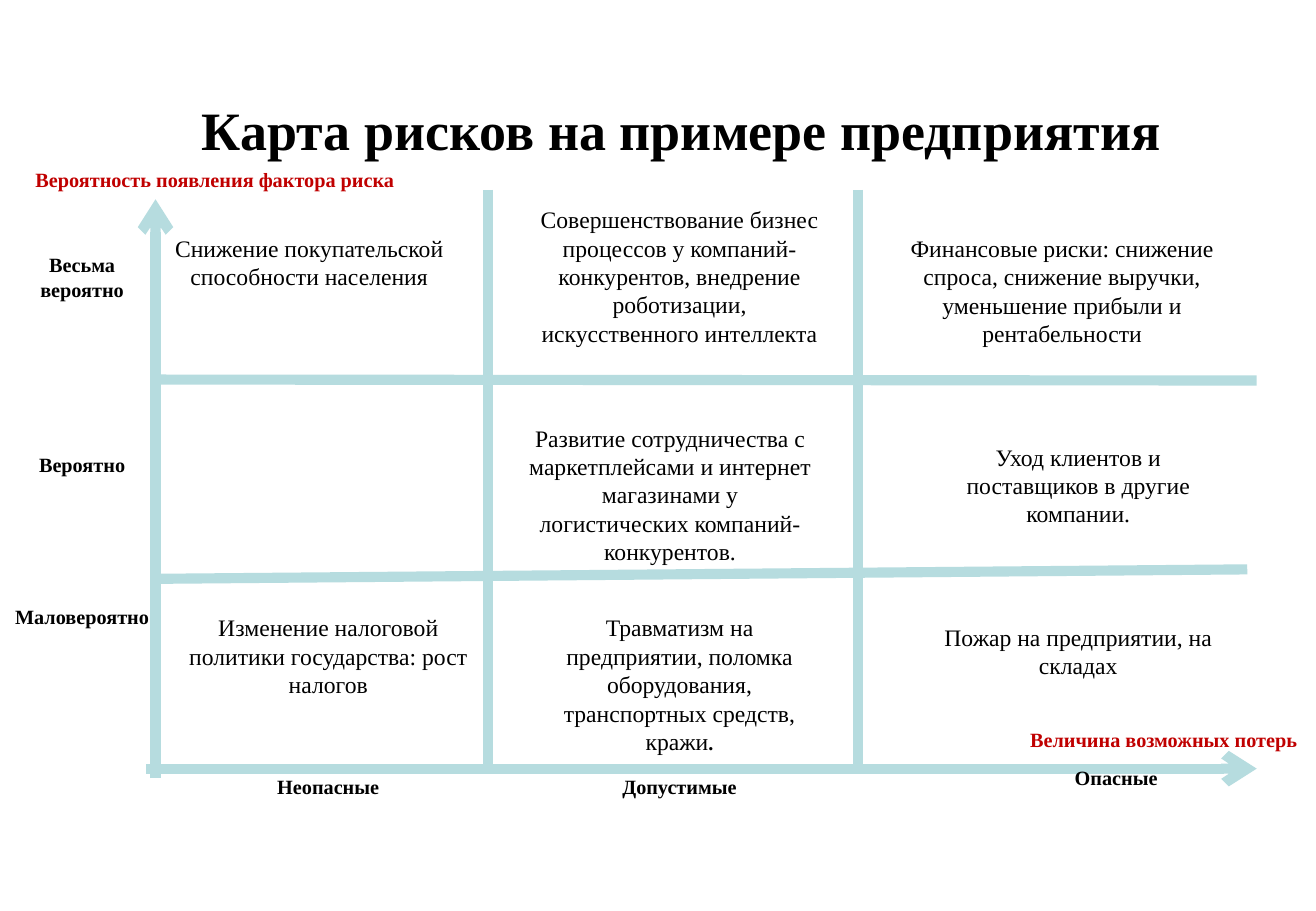
import pptx
import pptx.util
import pptx.dml.color
import pptx.enum.shapes
import pptx.enum.text
import pptx.oxml.ns
import lxml.etree

WIDE, HIGH = 10.83, 7.5
UNIT = HIGH / 96          # the slide is 96 grid rows high
AXIS = 1.28               # columns are counted from the upright axis
EDGE = -AXIS / UNIT       # left edge of the slide, in columns
TALL = 8.2                # rows in a text box
CELL = 32.4               # columns in a text box
SIDE = 17.3               # columns in a row label
FONT = "Times New Roman"
COLORS = {"text": "000000", "axis": "C00000", "grid": "B6DCDF"}

# (column, row, width, text)
RISKS = [
    (0, 24, CELL, "Снижение покупательской способности населения"),
    (39, 21, CELL, "Совершенствование бизнес процессов у компаний-конкурентов, "
                   "внедрение роботизации, искусственного интеллекта"),
    (78, 24, 35, "Финансовые риски: снижение спроса, снижение выручки, "
                 "уменьшение прибыли и рентабельности"),
    (38, 44, CELL, "Развитие сотрудничества с маркетплейсами и интернет "
                   "магазинами у логистических компаний-конкурентов."),
    (81, 46, CELL, "Уход клиентов и поставщиков в другие компании."),
    (2, 64, CELL, "Изменение налоговой политики государства: рост налогов"),
    (81, 65, CELL, "Пожар на предприятии, на складах"),
]
INJURY = ("Травматизм на предприятии, поломка оборудования, "
          "транспортных средств, кражи")
LABELS = [
    (EDGE, 26, SIDE, "Весьма вероятно"),
    (EDGE, 47, SIDE, "Вероятно"),
    (EDGE, 63, SIDE, "Маловероятно"),
    (2, 81, CELL, "Неопасные"),
    (39, 81, CELL, "Допустимые"),
    (85, 80, CELL, "Опасные"),
]
NAMES = [
    (EDGE, 17, 45.3, "Вероятность появления фактора риска"),
    (90, 76, CELL, "Величина возможных потерь"),
]
# (start column, start row, end column, end row, arrow)
LINES = [
    (-1, 81, 116, 81, True),
    (0, 82, 0, 21, True),
    (0, 61, 115, 60, False),
    (0, 40, 116, 40.1, False),
    (35, 20, 35, 81, False),
    (74, 20, 74, 81, False),
]


def at_col(col):
    return pptx.util.Inches(AXIS + col * UNIT)


def span(count):
    return pptx.util.Inches(count * UNIT)


def paint(name):
    return pptx.dml.color.RGBColor.from_string(COLORS[name])


def add_runs(frame, runs):
    """Write centred runs, each given as (text, size, bold, colour)."""
    frame.word_wrap = True
    para = frame.paragraphs[0]
    para.alignment = pptx.enum.text.PP_ALIGN.CENTER
    for text, size, bold, color in runs:
        run = para.add_run()
        run.text = text
        run.font.name = FONT
        run.font.size = pptx.util.Pt(size)
        run.font.bold = bold
        run.font.color.rgb = paint(color)


def add_text(slide, col, row, wide, runs):
    box = slide.shapes.add_textbox(at_col(col), span(row), span(wide), span(TALL))
    add_runs(box.text_frame, runs)


def add_title(slide, text):
    title = slide.shapes.title
    title.left, title.top = at_col(-13), span(9)
    title.width, title.height = span(136.8), span(9.1)
    frame = title.text_frame
    frame.auto_size = pptx.enum.text.MSO_AUTO_SIZE.NONE
    frame.vertical_anchor = pptx.enum.text.MSO_ANCHOR.MIDDLE
    add_runs(frame, [(text, 32, True, "text")])


def add_line(slide, col, row, end_col, end_row, arrow):
    line = slide.shapes.add_connector(
        pptx.enum.shapes.MSO_CONNECTOR.STRAIGHT,
        at_col(col), span(row), at_col(end_col), span(end_row))
    line.line.color.rgb = paint("grid")
    line.line.width = pptx.util.Pt(6)
    if arrow:
        tail = lxml.etree.SubElement(
            line.line._get_or_add_ln(), pptx.oxml.ns.qn("a:tailEnd"))
        tail.set("type", "arrow")
    lxml.etree.SubElement(
        line._element.spPr, pptx.oxml.ns.qn("a:effectLst"))


def main():
    deck = pptx.Presentation()
    deck.slide_width = pptx.util.Inches(WIDE)
    deck.slide_height = pptx.util.Inches(HIGH)
    slide = deck.slides.add_slide(deck.slide_layouts.get_by_name("Title Only"))
    add_title(slide, "Карта рисков на примере предприятия")

    # Axes and grid
    for line in LINES:
        add_line(slide, *line)

    # Risks in the cells
    for col, row, wide, text in RISKS:
        add_text(slide, col, row, wide, [(text, 14, False, "text")])
    add_text(slide, 39, 64, CELL,
             [(INJURY, 14, False, "text"), (".", 12, True, "text")])

    # Axis names and scale labels
    for group, color in ((NAMES, "axis"), (LABELS, "text")):
        for col, row, wide, text in group:
            add_text(slide, col, row, wide, [(text, 12, True, color)])

    deck.save("out.pptx")


if __name__ == "__main__":
    main()
